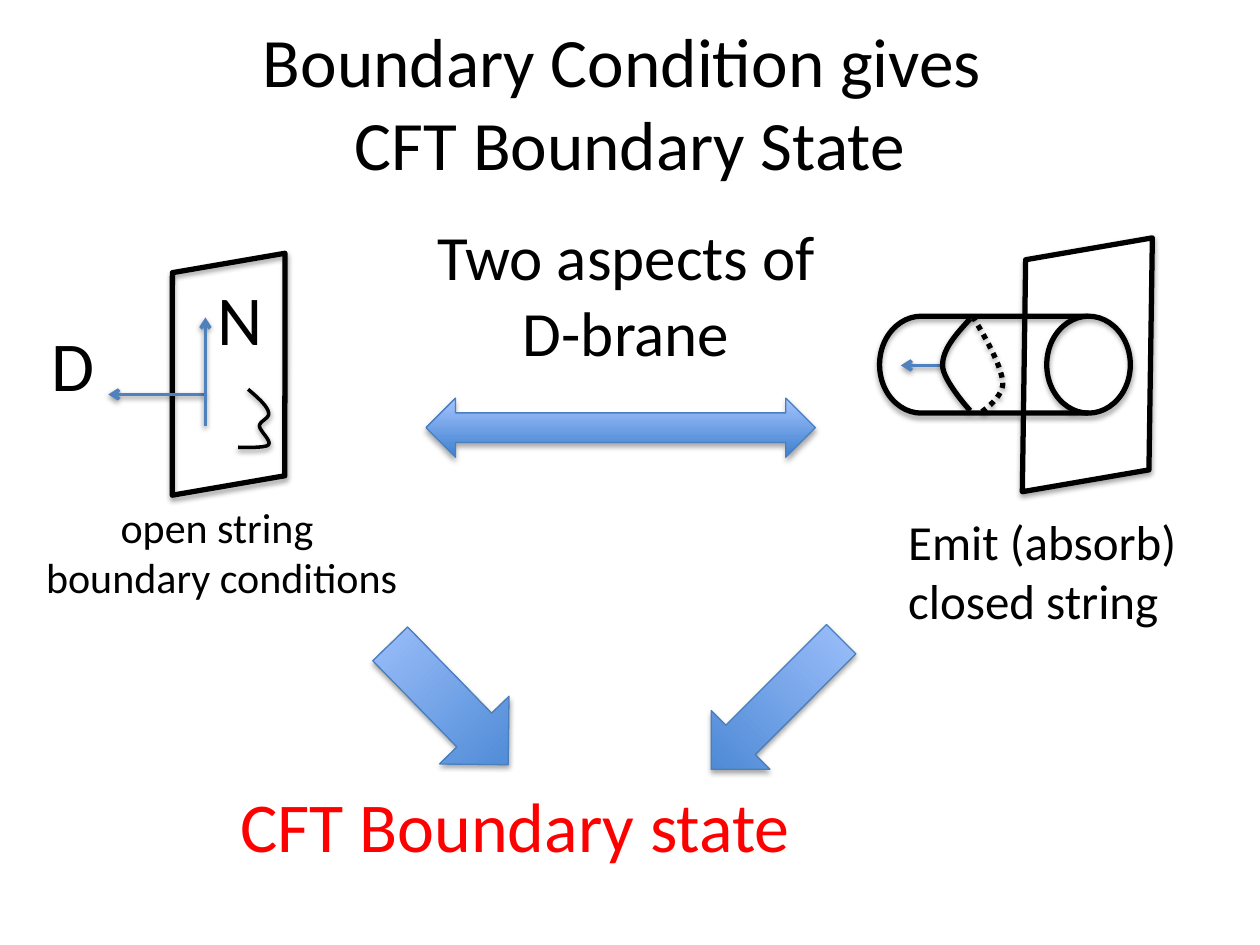
from lxml.etree import SubElement
from pptx import Presentation
from pptx.dml.color import RGBColor
from pptx.enum.dml import MSO_LINE
from pptx.enum.shapes import MSO_CONNECTOR, MSO_SHAPE
from pptx.enum.text import MSO_ANCHOR, PP_ALIGN
from pptx.oxml.ns import qn
from pptx.util import Pt

HUES = {"ink": "000000", "paper": "FFFFFF", "red": "FF0000", "axis": "4F81BD",
        "edge": "4B7EBC", "deep": "3F80CE", "pale": "A4C4FF"}
FONT = "Calibri"
MID, LEFT = PP_ALIGN.CENTER, PP_ALIGN.LEFT

# lines, box, size, hue, align, wrap
TITLE = (["Boundary Condition gives ", "CFT Boundary State"], (36, 13, 648, 90), 39.6)
TEXTS = [
    (["open string ", "boundary conditions"], (10.8, 283, 231.8, 65.5), 24, "ink", MID, True),
    (["D"], (22.3, 180, 39.6, 55.4), 40, "ink", LEFT, False),
    (["N"], (117.4, 154.1, 40.3, 55.4), 40, "ink", LEFT, False),
    (["Two aspects of", "D-brane"], (240.5, 121, 234.7, 94.3), 36, "ink", MID, False),
    (["Emit (absorb)", "closed string"], (511.9, 288.7, 173.5, 74.9), 28, "ink", LEFT, False),
    (["CFT Boundary state"], (130.3, 443.5, 333.4, 55.4), 40, "red", LEFT, False),
]

# preset, box, turn, fill
BRANES = [
    (MSO_SHAPE.PARALLELOGRAM, (572.4, 143.3, 97.9, 130.3), 350.2, "paper"),
    (MSO_SHAPE.PARALLELOGRAM, (87.1, 151.2, 87.1, 125.3), 350.2, None),
    (MSO_SHAPE.FLOWCHART_DIRECT_ACCESS_STORAGE, (502.6, 180.7, 143.3, 55.4), 0, None),
]
ARROWS = [
    (MSO_SHAPE.DOWN_ARROW, (419.8, 349.9, 47.5, 105.1), 45, "blend"),
    (MSO_SHAPE.DOWN_ARROW, (229, 354.2, 55.4, 96.5), 315.7, "blend"),
    (MSO_SHAPE.LEFT_RIGHT_ARROW, (243.4, 227.5, 222.5, 33.8), 0, "blend"),
]
AXES = [
    (117.4, 225.4, 61.9, 225.4),
    (117.4, 243.4, 117.4, 181.4),
    (538.6, 208.8, 514.8, 208.8),
]

# start, cubic pieces, width, dash
CURVES = [
    ((554.4, 182.2), [((546.5, 190.8), (538.6, 199.4), (538.6, 208.8)),
                      ((538.6, 217.4), (554.4, 234.7), (554.4, 234.7))], 3, None),
    ((555.8, 180.7), [((564.5, 195.1), (572.4, 209.5), (573.1, 218.9)),
                      ((573.1, 228.2), (558.7, 236.9), (558.7, 236.9))], 3, MSO_LINE.ROUND_DOT),
    ((141.8, 222.5), [((146.9, 226.8), (152.6, 231.8), (153.4, 235.4)),
                      ((154.8, 239), (148.3, 240.5), (148.3, 243.4)),
                      ((148.3, 246.2), (155.5, 252), (153.4, 254.2)),
                      ((151.9, 256.3), (136.1, 255.6), (136.1, 255.6))], 2, None),
]
STEPS = 16


def hue(name):
    return RGBColor.from_string(HUES[name])


def pts(vals):
    return [Pt(v) for v in vals]


def stroke(shape, name, width):
    shape.line.color.rgb = hue(name)
    shape.line.width = Pt(width)


def shade(shape, drop, alpha):
    """Add a soft shadow below; call after the line is set."""
    effect = SubElement(shape.element.spPr, qn("a:effectLst"))
    outer = SubElement(effect, qn("a:outerShdw"), blurRad=str(Pt(3.1)),
                       dist=str(Pt(drop)), dir="5400000", rotWithShape="0")
    color = SubElement(outer, qn("a:srgbClr"), val=HUES["ink"])
    SubElement(color, qn("a:alpha"), val=str(alpha * 1000))


def add_run(para, words, size, name):
    run = para.add_run()
    run.text = words
    run.font.name = FONT
    run.font.size = Pt(size)
    run.font.color.rgb = hue(name)


def add_title(slide, lines, box, size):
    frame = slide.shapes.add_textbox(*pts(box)).text_frame
    frame.word_wrap = True
    frame.vertical_anchor = MSO_ANCHOR.MIDDLE
    para = frame.paragraphs[0]
    para.alignment = MID
    for i, words in enumerate(lines):
        if i:
            para.add_line_break()
        add_run(para, words, size, "ink")


def add_text(slide, lines, box, size, name, align, wrap):
    frame = slide.shapes.add_textbox(*pts(box)).text_frame
    frame.word_wrap = wrap
    for i, words in enumerate(lines):
        para = frame.add_paragraph() if i else frame.paragraphs[0]
        para.alignment = align
        add_run(para, words, size, name)


def add_solid(slide, kind, box, turn, fill, edge, width):
    shape = slide.shapes.add_shape(kind, *pts(box))
    shape.rotation = turn
    if fill == "blend":
        shape.fill.gradient()
        shape.fill.gradient_angle = 90
        for stop, name in zip(shape.fill.gradient_stops, ("deep", "pale")):
            stop.color.rgb = hue(name)
    elif fill:
        shape.fill.solid()
        shape.fill.fore_color.rgb = hue(fill)
    else:
        shape.fill.background()
    stroke(shape, edge, width)
    shade(shape, 1.8, 35)


def add_axis(slide, ends):
    line = slide.shapes.add_connector(MSO_CONNECTOR.STRAIGHT, *pts(ends))
    stroke(line, "axis", 2)
    SubElement(line.line._get_or_add_ln(), qn("a:tailEnd"), type="arrow")
    shade(line, 1.6, 38)


def cubic(a, b, c, d):
    """Points along a Bezier piece, without its start."""
    for i in range(1, STEPS + 1):
        t = i / STEPS
        u = 1 - t
        yield tuple(Pt(u**3 * p + 3 * u * u * t * q + 3 * u * t * t * r + t**3 * s)
                    for p, q, r, s in zip(a, b, c, d))


def add_curve(slide, start, parts, width, dash):
    pen = slide.shapes.build_freeform(*pts(start))
    for part in parts:
        pen.add_line_segments(list(cubic(start, *part)), close=False)
        start = part[-1]
    shape = pen.convert_to_shape()
    shape.fill.background()
    stroke(shape, "ink", width)
    if dash:
        shape.line.dash_style = dash
    shade(shape, 1.6, 38)


def main():
    deck = Presentation()
    deck.slide_width, deck.slide_height = Pt(720), Pt(540)
    slide = deck.slides.add_slide(deck.slide_layouts[6])
    for brane in BRANES:
        add_solid(slide, *brane, "ink", 3)
    add_title(slide, *TITLE)
    for text in TEXTS:
        add_text(slide, *text)
    for ends in AXES:
        add_axis(slide, ends)
    for curve in CURVES:
        add_curve(slide, *curve)
    for arrow in ARROWS:
        add_solid(slide, *arrow, "edge", 0.75)
    deck.save("out.pptx")


if __name__ == "__main__":
    main()
